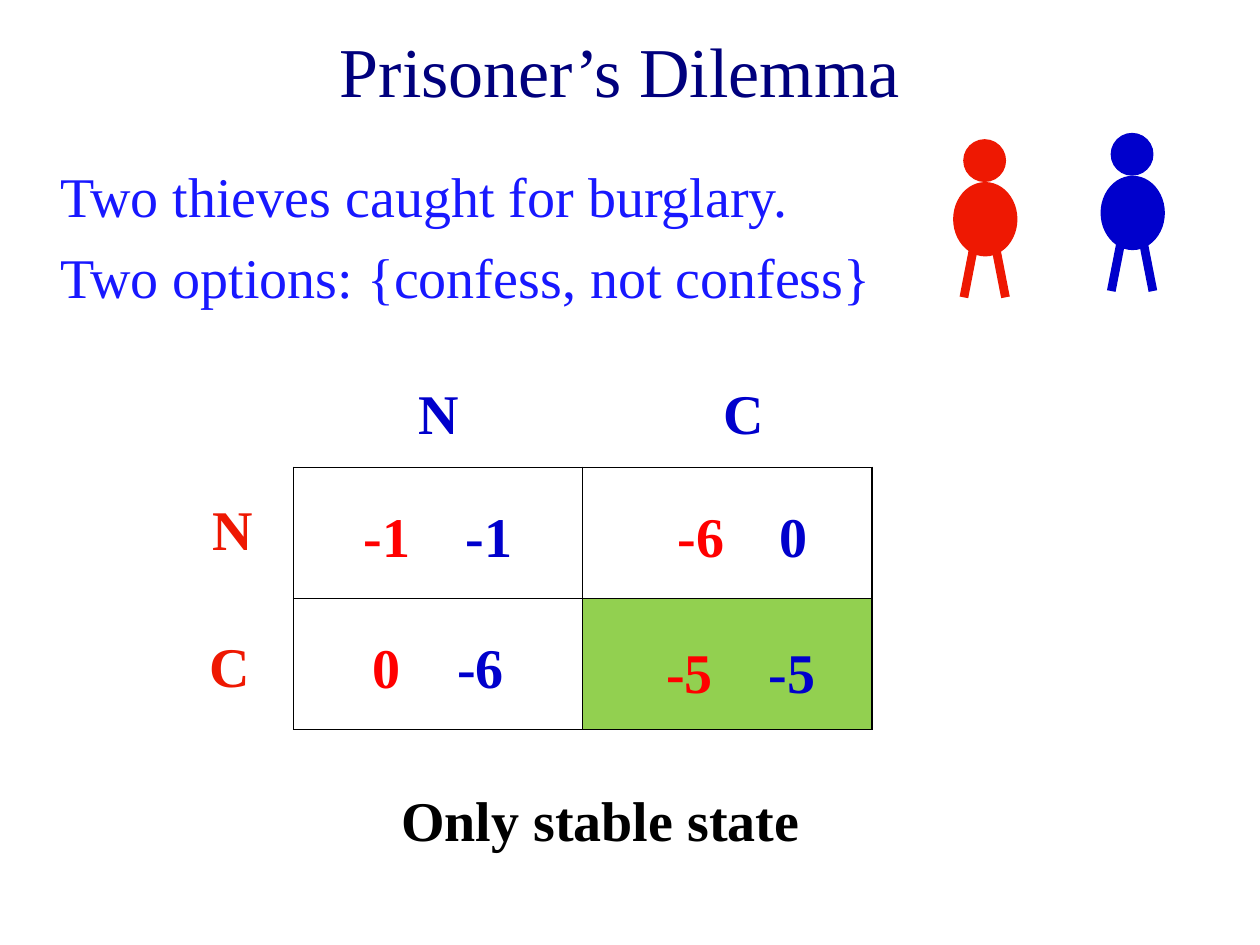
from lxml import etree
from pptx import Presentation
from pptx import util as u
from pptx.dml.color import RGBColor
from pptx.enum import shapes, text
from pptx.oxml import ns

NAVY = RGBColor(0x00, 0x00, 0x7D)
BODY_BLUE = RGBColor(0x18, 0x18, 0xFF)
BLUE = RGBColor(0x00, 0x00, 0xCC)
RED = RGBColor(0xEE, 0x18, 0x02)
PAYOFF_RED = RGBColor(0xFF, 0x00, 0x00)
GREEN = RGBColor(0x92, 0xD0, 0x50)
BLACK = RGBColor(0x00, 0x00, 0x00)


def add_span(para, words, *, size=32, color=BLACK, bold=True, font="Times New Roman"):
    span = para.add_run()
    span.text = words
    span.font.name = font
    span.font.size = u.Pt(size)
    span.font.bold = bold
    span.font.color.rgb = color


class DilemmaSlide:
    def __init__(self, deck):
        self.slide = deck.slides.add_slide(deck.slide_layouts[6])

    def frame(self, left, top, width, height, wrap=False):
        box = self.slide.shapes.add_textbox(
            u.Inches(left), u.Inches(top), u.Inches(width), u.Inches(height))
        box.text_frame.word_wrap = wrap
        return box.text_frame

    def label(self, words, left, top, width=0.53, height=0.64, wrap=False, **style):
        frame = self.frame(left, top, width, height, wrap)
        frame.vertical_anchor = text.MSO_ANCHOR.MIDDLE
        para = frame.paragraphs[0]
        para.alignment = text.PP_ALIGN.CENTER
        add_span(para, words, **style)

    def body(self, lines, left, top, width, height):
        frame = self.frame(left, top, width, height, wrap=True)
        for index, line in enumerate(lines):
            para = frame.add_paragraph() if index else frame.paragraphs[0]
            para.space_before = u.Pt(8 if index else 0)
            add_span(para, line, color=BODY_BLUE, bold=False)

    def payoff(self, first, second, left, top):
        negative = first.startswith("-")
        width = 1.4 if negative and second.startswith("-") else 1.25
        para = self.frame(left, top, width, 0.64, wrap=True).paragraphs[0]
        para.alignment = text.PP_ALIGN.LEFT
        stops = etree.SubElement(para._p.get_or_add_pPr(), ns.qn("a:tabLst"))
        position = u.Inches(0.81 if negative else 0.67)
        etree.SubElement(stops, ns.qn("a:tab"), pos=str(position), algn="l")
        add_span(para, first, color=PAYOFF_RED)
        add_span(para, "\t" + second, color=BLUE)

    def thief(self, left, top, color):
        group = self.slide.shapes.add_group_shape()
        for x, y, width, height in ((0, 0.34, 0.5, 0.58), (0.08, 0, 0.33, 0.33)):
            part = group.shapes.add_shape(
                shapes.MSO_SHAPE.OVAL, u.Inches(left + x), u.Inches(top + y),
                u.Inches(width), u.Inches(height))
            part.shadow.inherit = False
            part.fill.solid()
            part.fill.fore_color.rgb = color
            part.line.color.rgb = color
            part.line.width = u.Pt(0.75)
        for hip, foot in ((0.16, 0.08), (0.33, 0.41)):
            leg = group.shapes.add_connector(
                shapes.MSO_CONNECTOR.STRAIGHT, u.Inches(left + hip), u.Inches(top + 0.84),
                u.Inches(left + foot), u.Inches(top + 1.25))
            leg.line.color.rgb = color
            leg.line.width = u.Pt(5)
            etree.SubElement(leg._element.spPr, ns.qn("a:effectLst"))

    def matrix(self, left, top, width, height, stable):
        grid = self.slide.shapes.add_table(
            2, 2, u.Inches(left), u.Inches(top), u.Inches(width), u.Inches(height)).table
        grid.first_row = grid.horz_banding = False
        for cell in grid.iter_cells():
            properties = cell._tc.get_or_add_tcPr()
            for side in ("lnL", "lnR", "lnT", "lnB"):
                edge = etree.SubElement(properties, ns.qn(f"a:{side}"), w=str(u.Pt(1)))
                paint = etree.SubElement(edge, ns.qn("a:solidFill"))
                etree.SubElement(paint, ns.qn("a:srgbClr"), val=str(BLACK))
            cell.fill.background()
        best = grid.cell(*stable)
        best.fill.solid()
        best.fill.fore_color.rgb = GREEN


def main():
    deck = Presentation()
    deck.slide_width, deck.slide_height = u.Inches(10), u.Inches(7.5)
    page = DilemmaSlide(deck)
    page.label("Prisoner’s Dilemma", 0.42, -0.2, 9, 1.5, wrap=True,
               size=40, color=NAVY, bold=False)
    page.body(["Two thieves caught for burglary.", "Two options: {confess, not confess}"],
              0.38, 1.23, 9.17, 5.03)
    page.thief(7.57, 1.11, RED)
    page.thief(8.74, 1.06, BLUE)
    page.matrix(2.33, 3.71, 4.59, 2.08, stable=(1, 1))
    for words, left, top, color in (
            ("N", 1.58, 3.87, RED), ("C", 1.56, 4.96, RED),
            ("N", 3.22, 2.95, BLUE), ("C", 5.64, 2.95, BLUE)):
        page.label(words, left, top, color=color)
    for first, second, left, top in (
            ("-1", "-1", 2.79, 3.93), ("-6", "0", 5.28, 3.93),
            ("0", "-6", 2.86, 4.97), ("-5", "-5", 5.19, 5.01)):
        page.payoff(first, second, left, top)
    page.label("Only stable state", 3.07, 6.18, 3.39)
    deck.save("out.pptx")


if __name__ == "__main__":
    main()
